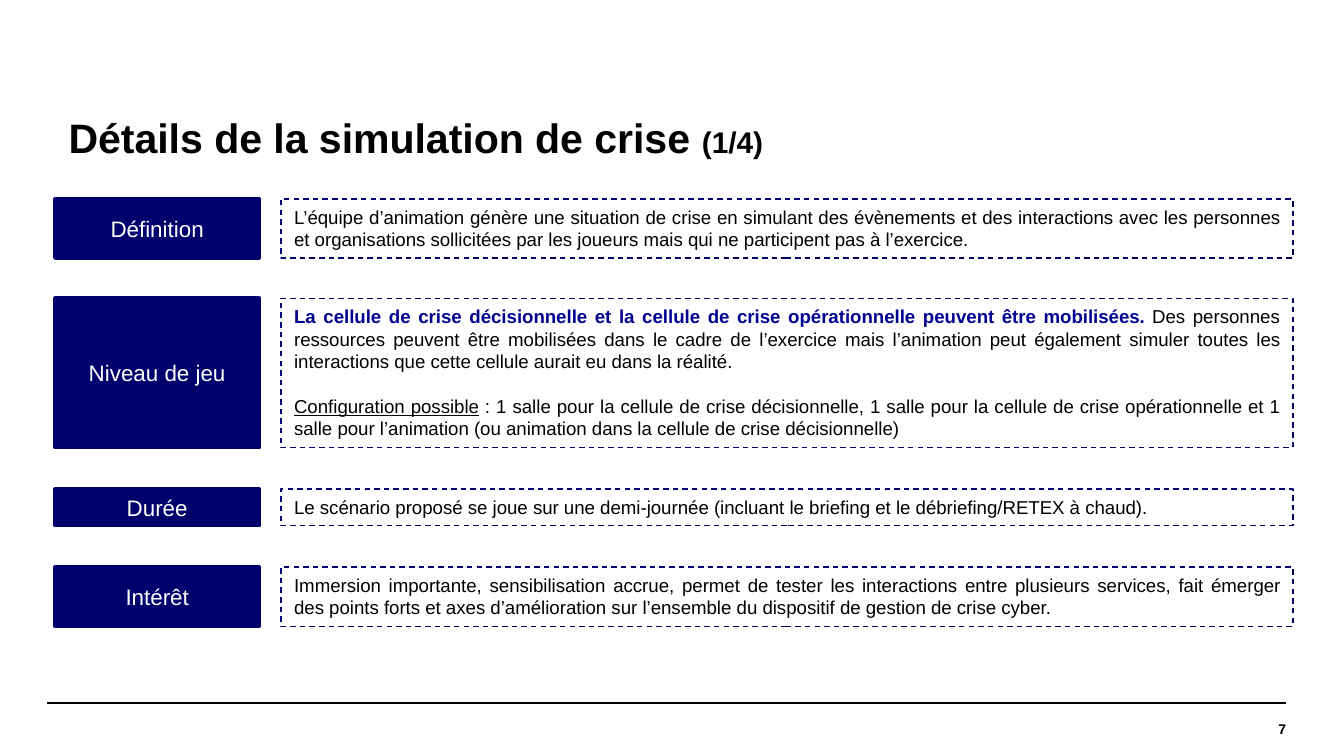
from lxml.etree import SubElement
from pptx import Presentation
from pptx.dml.color import RGBColor
from pptx.enum.dml import MSO_LINE_DASH_STYLE as Dash
from pptx.enum.shapes import MSO_CONNECTOR, MSO_SHAPE
from pptx.enum.text import MSO_ANCHOR as Anchor, MSO_AUTO_SIZE as AutoSize, PP_ALIGN as Align
from pptx.oxml.ns import qn
from pptx.util import Inches, Pt

COLORS = {"navy": "00006D", "accent": "000091", "black": "000000", "white": "FFFFFF"}

# label, top, height, paragraphs made of (text, style) runs
ROWS = [
    ("Définition", 1.48, 0.44, [
        [("L’équipe d’animation génère une situation de crise en simulant des évènements et des "
          "interactions avec les personnes et organisations sollicitées par les joueurs mais qui ne "
          "participent pas à l’exercice.", "plain")]]),
    ("Niveau de jeu", 2.22, 1.11, [
        [("La cellule de crise décisionnelle et la cellule de crise opérationnelle peuvent être "
          "mobilisées.", "key"),
         (" Des personnes ressources peuvent être mobilisées dans le cadre de l’exercice mais "
          "l’animation peut également simuler toutes les interactions que cette cellule aurait eu "
          "dans la réalité.", "plain")],
        [("Configuration possible", "underlined"),
         (" : 1 salle pour la cellule de crise décisionnelle, 1 salle pour la cellule de crise "
          "opérationnelle et 1 salle pour l’animation (ou animation dans la cellule de crise "
          "décisionnelle)", "plain")]]),
    ("Durée", 3.64, 0.27, [
        [("Le scénario proposé se joue sur une demi-journée (incluant le briefing et le "
          "débriefing/RETEX à chaud).", "plain")]]),
    ("Intérêt", 4.22, 0.44, [
        [("Immersion importante, sensibilisation accrue, permet de tester les interactions entre "
          "plusieurs services, fait émerger des points forts et axes d’amélioration sur l’ensemble "
          "du dispositif de gestion de crise cyber.", "plain")]]),
]


def set_font(font, size, color, bold=False):
    font.name = "Arial"
    font.size = Pt(size)
    font.bold = bold
    font.color.rgb = RGBColor.from_string(COLORS[color])


def add_box(left, top, width, height, line_width):
    """Add a navy-outlined rectangle with wrapped text and no shadow."""
    box = slide.shapes.add_shape(
        MSO_SHAPE.RECTANGLE, Inches(left), Inches(top), Inches(width), Inches(height))
    box.shadow.inherit = False
    box.line.color.rgb = RGBColor.from_string(COLORS["navy"])
    box.line.width = Pt(line_width)
    box.text_frame.word_wrap = True
    return box


presentation = Presentation()
presentation.slide_width = Inches(10)
presentation.slide_height = Inches(10) * 9 // 16
slide = presentation.slides.add_slide(presentation.slide_layouts[5])

# Title
title = slide.shapes.title
title.left, title.top = Inches(0.39), Inches(0.75)
title.width, title.height = Inches(9.21), Inches(0.59)
frame = title.text_frame
frame.vertical_anchor = Anchor.MIDDLE
frame.auto_size = AutoSize.NONE
frame.margin_left = Inches(0.12)
paragraph = frame.paragraphs[0]
paragraph.alignment = Align.LEFT
paragraph.line_spacing = 0.9
for text, size in [("Détails de la simulation de crise ", 22), ("(1/4)", 16)]:
    run = paragraph.add_run()
    run.text = text
    set_font(run.font, size, "black", bold=True)

# Footer rule and page number
rule = slide.shapes.add_connector(
    MSO_CONNECTOR.STRAIGHT, Inches(0.35), Inches(5.23), Inches(9.57), Inches(5.23))
rule.line.color.rgb = RGBColor.from_string(COLORS["black"])
rule.line.width = Pt(0.8)
SubElement(rule._element.spPr, qn("a:effectLst"))

page_number = slide.shapes.add_textbox(Inches(8.09), Inches(5.23), Inches(1.48), Inches(0.39))
frame = page_number.text_frame
frame.word_wrap = True
frame.vertical_anchor = Anchor.MIDDLE
frame.margin_left = frame.margin_top = frame.margin_right = frame.margin_bottom = 0
paragraph = frame.paragraphs[0]
paragraph.text = "7"
paragraph.alignment = Align.RIGHT
set_font(paragraph.font, 7.5, "black", bold=True)

# Labels with their descriptions
for label_text, top, height, paragraphs in ROWS:
    label = add_box(0.41, top, 1.52, height, 2)
    label.fill.solid()
    label.fill.fore_color.rgb = RGBColor.from_string(COLORS["navy"])
    label.text_frame.vertical_anchor = Anchor.MIDDLE
    paragraph = label.text_frame.paragraphs[0]
    paragraph.text = label_text
    paragraph.alignment = Align.CENTER
    set_font(paragraph.font, 12, "white")

    description = add_box(2.09, top, 7.53, height, 0.75)
    description.fill.background()
    description.line.dash_style = Dash.DASH
    frame = description.text_frame
    frame.auto_size = AutoSize.SHAPE_TO_FIT_TEXT
    frame.vertical_anchor = Anchor.TOP
    for index, runs in enumerate(paragraphs):
        paragraph = frame.add_paragraph() if index else frame.paragraphs[0]
        paragraph.alignment = Align.JUSTIFY
        if index:
            paragraph.space_before = Pt(12)
        for text, style in runs:
            run = paragraph.add_run()
            run.text = text
            set_font(run.font, 10, "accent" if style == "key" else "black", style == "key")
            if style == "underlined":
                run.font.underline = True

presentation.save("out.pptx")
